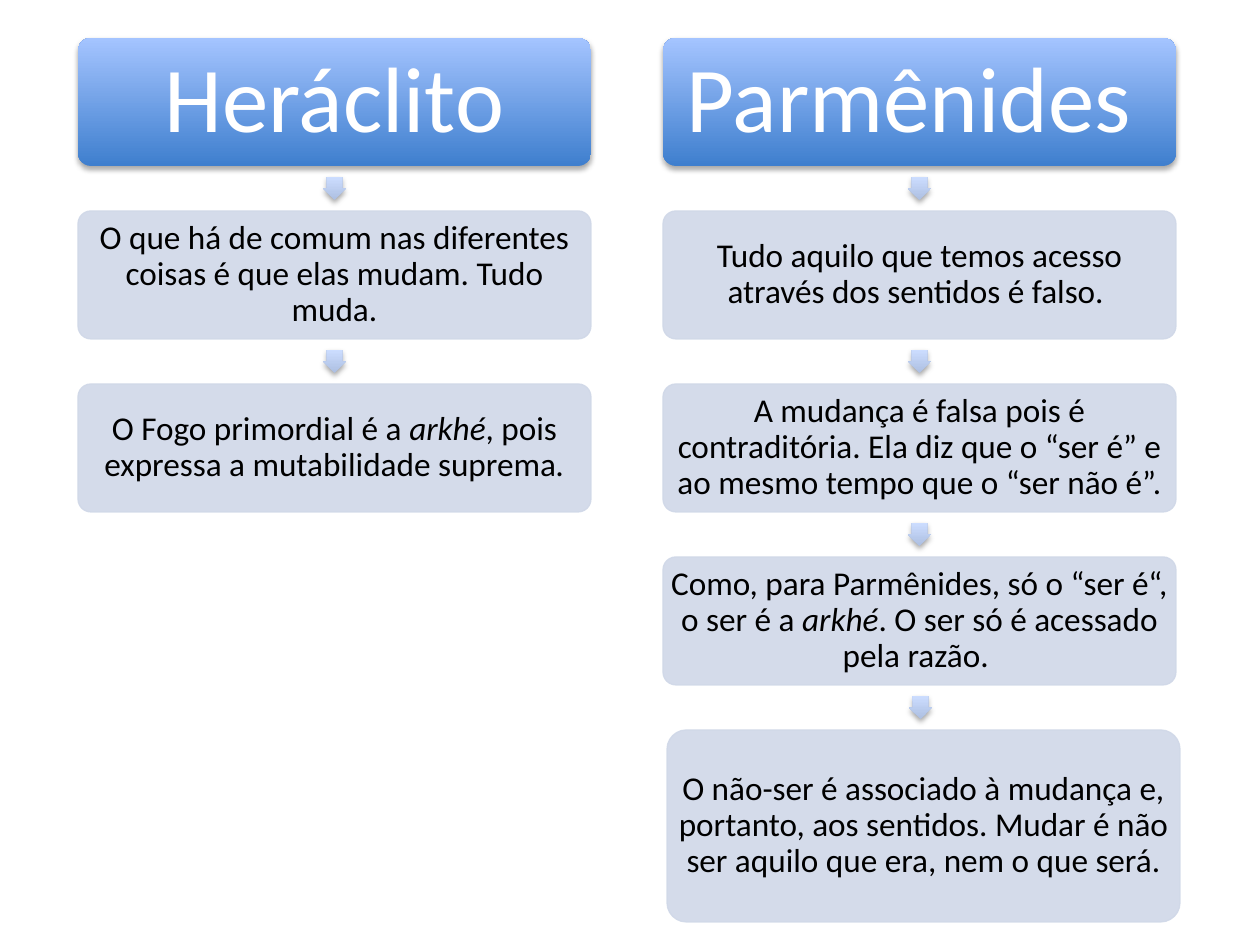
import pptx
import pptx.util
import pptx.dml.color
import pptx.enum.shapes
import pptx.enum.text
import pptx.oxml
import pptx.oxml.ns

PX = 914400 // 126
FONT = "Calibri"

# Each column: left edge, heading, then boxes; a box is a list of (text, italic) runs.
COLS = [
    (78, "Heráclito", [
        [("O que há de comum nas diferentes coisas é que elas mudam. Tudo muda.", False)],
        [("O Fogo primordial é a ", False), ("arkhé", True),
         (", pois expressa a mutabilidade suprema", False), (".", True)],
    ]),
    (663, "Parmênides ", [
        [("Tudo aquilo que temos acesso através dos sentidos é falso. ", False)],
        [("A mudança é falsa pois é contraditória. Ela diz que o “ser é” "
          "e ao mesmo tempo que o “ser não é”.", False)],
        [("Como, para Parmênides, só o “ser é“, o ser é a ", False), ("arkhé", True),
         (". O ser só é acessado pela razão. ", False)],
        [("O não-ser é associado à mudança e, portanto, aos sentidos. "
          "Mudar é não ser aquilo que era, nem o que será.", False)],
    ]),
]
TOP, WIDE, HIGH, STEP = 38, 513, 128, 173
ARROW = 23
LAST_ROW, LAST_HIGH, LAST_SHIFT = 4, 192, 4

HEAD_FILL = ("3F7FCE", "A4C4FF")
ARROW_FILL = ("ADBFE1", "CCDDFF")
BOX_FILL = "D0D8E8"
SHADOW = (
    '<a:effectLst xmlns:a="http://schemas.openxmlformats.org/drawingml/2006/main">'
    '<a:outerShdw blurRad="39370" dist="22860" dir="5400000" rotWithShape="0">'
    '<a:srgbClr val="000000"><a:alpha val="35000"/></a:srgbClr>'
    '</a:outerShdw></a:effectLst>')

KIND = pptx.enum.shapes.MSO_SHAPE


def rgb(code):
    return pptx.dml.color.RGBColor.from_string(code)


def add_shape(slide, kind, left, top, wide, high, adjust):
    shape = slide.shapes.add_shape(kind, *(n * PX for n in (left, top, wide, high)))
    for i, part in enumerate(adjust):
        shape.adjustments[i] = part
    shape.shadow.inherit = False
    return shape


def shade(shape, colours):
    """Give a bottom-to-top gradient, no outline and a soft shadow below."""
    shape.line.fill.background()
    shape.fill.gradient()
    shape.fill.gradient_angle = 90
    for i, code in enumerate(colours):
        stop = shape.fill.gradient_stops[i]
        stop.position = i
        stop.color.rgb = rgb(code)
    props = shape._element.spPr
    props.find(pptx.oxml.ns.qn("a:gradFill")).set("rotWithShape", "0")
    props.replace(props.find(pptx.oxml.ns.qn("a:effectLst")),
                  pptx.oxml.parse_xml(SHADOW))


def tint(shape):
    """Give a flat fill and outline, both 90% opaque."""
    shape.fill.solid()
    shape.fill.fore_color.rgb = rgb(BOX_FILL)
    shape.line.color.rgb = rgb(BOX_FILL)
    shape.line.width = pptx.util.Pt(0.75)
    for code in shape._element.spPr.iter(pptx.oxml.ns.qn("a:srgbClr")):
        code.append(pptx.oxml.parse_xml(
            '<a:alpha xmlns:a="http://schemas.openxmlformats.org/drawingml/2006/main"'
            ' val="90000"/>'))


def write(shape, runs, size, colour, inset):
    frame = shape.text_frame
    frame.word_wrap = True
    frame.vertical_anchor = pptx.enum.text.MSO_ANCHOR.MIDDLE
    frame.margin_left = frame.margin_right = inset * PX
    frame.margin_top = frame.margin_bottom = inset * PX
    para = frame.paragraphs[0]
    para.alignment = pptx.enum.text.PP_ALIGN.CENTER
    para.line_spacing = 0.9
    for text, slant in runs:
        run = para.add_run()
        run.text = text
        run.font.name = FONT
        run.font.size = pptx.util.Pt(size)
        run.font.italic = slant
        run.font.color.rgb = rgb(colour)


def add_column(slide, left, title, boxes):
    head = add_shape(slide, KIND.ROUNDED_RECTANGLE, left, TOP, WIDE, HIGH, [0.1])
    shade(head, HEAD_FILL)
    write(head, [(title, False)], 53, "FFFFFF", 9)
    for row, runs in enumerate(boxes, 1):
        last = row == LAST_ROW
        top = TOP + row * STEP
        gap = STEP - HIGH
        arrow = add_shape(slide, KIND.RIGHT_ARROW,
                          left + (WIDE - ARROW) // 2 + last,
                          top - (gap + ARROW) // 2, ARROW, ARROW, [0.667, 0.5])
        arrow.rotation = 89.1 if last else 90
        shade(arrow, ARROW_FILL)
        box = add_shape(slide, KIND.ROUNDED_RECTANGLE,
                        left + LAST_SHIFT * last, top, WIDE,
                        LAST_HIGH if last else HIGH, [0.1])
        tint(box)
        write(box, runs, 19, "000000", 4)


def main():
    deck = pptx.Presentation()
    deck.slide_width = pptx.util.Inches(10)
    deck.slide_height = pptx.util.Inches(7.5)
    slide = deck.slides.add_slide(deck.slide_layouts[6])
    for col in COLS:
        add_column(slide, *col)
    deck.save("out.pptx")


if __name__ == "__main__":
    main()
